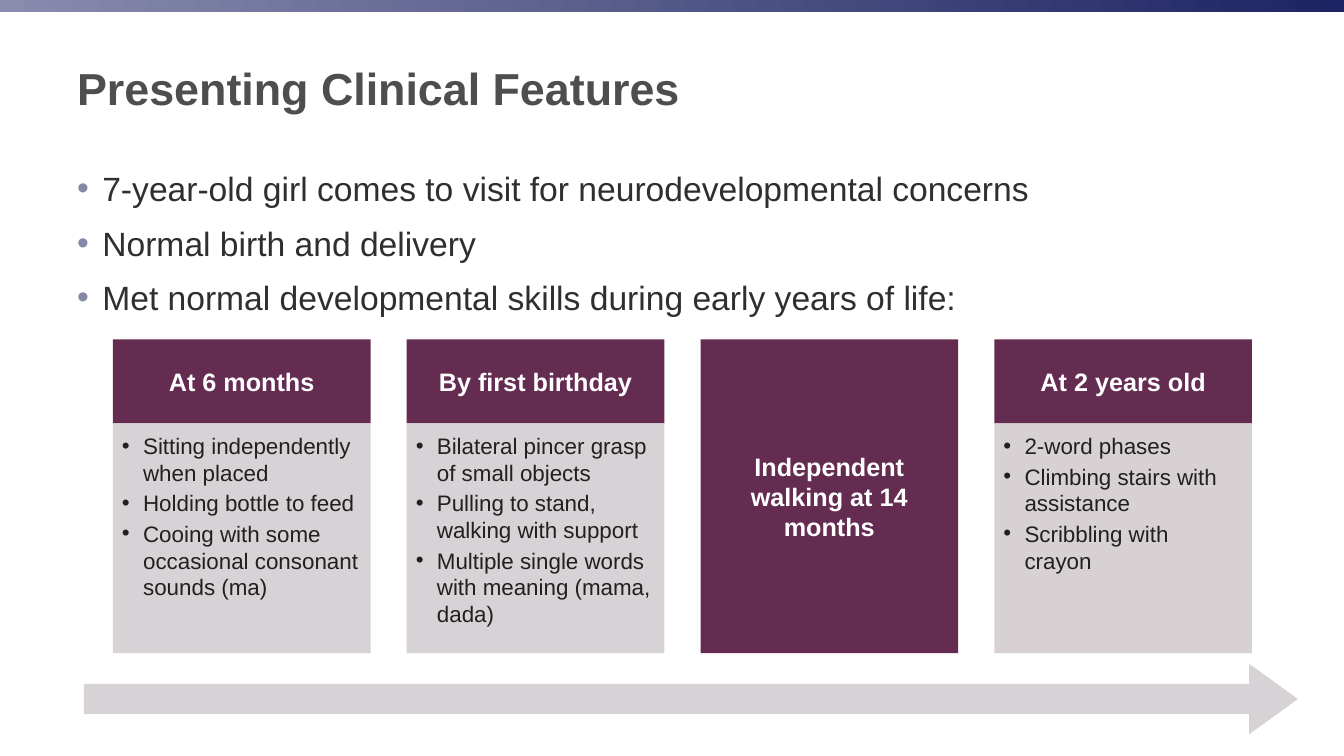
from dataclasses import dataclass
from typing import Optional

from lxml import etree
from pptx import Presentation, util as u
from pptx.dml.color import RGBColor
from pptx.enum import shapes, text
from pptx.oxml import ns


@dataclass(frozen=True)
class Theme:
    font: str = "Arial"
    bar_start: str = "898CAD"
    bar_end: str = "1C2463"
    title: str = "4D4E4D"
    body: str = "2F2F2F"
    bullet: str = "8589A7"
    plum: str = "642C50"
    mist: str = "D7D2D6"
    mist_sheer: str = "D3CDD0"
    detail: str = "202020"
    white: str = "FFFFFF"
    title_size: int = 32
    body_size: int = 24
    head_size: int = 18
    detail_size: int = 16


@dataclass(frozen=True)
class Box:
    """Percentages of the slide's width and height."""
    left: float
    top: float
    width: float
    height: float


@dataclass(frozen=True)
class Style:
    size: int
    color: str
    bold: bool = False
    align: text.PP_ALIGN = text.PP_ALIGN.LEFT
    anchor: text.MSO_ANCHOR = text.MSO_ANCHOR.TOP
    insets: tuple[float, float, float, float] = (0.1, 0.05, 0.1, 0.05)
    before: float = 0
    after: float = 0
    indent: float = 0
    bullet_color: Optional[str] = None


@dataclass(frozen=True)
class Card:
    heading: str
    details: tuple[str, ...] = ()
    fill: str = "D7D2D6"
    alpha: int = 100


T = Theme()
TITLE = Style(T.title_size, T.title, bold=True, anchor=text.MSO_ANCHOR.MIDDLE)
BODY = Style(T.body_size, T.body, before=10, indent=0.25, bullet_color=T.bullet)
HEAD = Style(T.head_size, T.white, bold=True, align=text.PP_ALIGN.CENTER,
             anchor=text.MSO_ANCHOR.MIDDLE, insets=(0.12, 0.07, 0.12, 0.07))
DETAIL = Style(T.detail_size, T.detail, insets=(0.09, 0.09, 0.12, 0.13),
               after=2.4, indent=0.21, bullet_color=T.detail)

FEATURES = (
    "7-year-old girl comes to visit for neurodevelopmental concerns",
    "Normal birth and delivery",
    "Met normal developmental skills during early years of life:",
)
CARDS = (
    Card("At 6 months", (
        "Sitting independently when placed",
        "Holding bottle to feed",
        "Cooing with some occasional consonant sounds (ma)")),
    Card("By first birthday", (
        "Bilateral pincer grasp of small objects",
        "Pulling to stand, walking with support",
        "Multiple single words with meaning (mama, dada)")),
    Card("Independent walking at 14 months"),
    Card("At 2 years old", (
        "2-word phases",
        "Climbing stairs with assistance",
        "Scribbling with crayon"), T.mist_sheer, 90),
)
CARD_LEFT, CARD_PITCH, CARD_WIDTH = 8.4, 21.86, 19.17
CARD_TOP, HEAD_HEIGHT, DETAIL_HEIGHT = 44.9, 11.1, 30.4

prs = Presentation()
prs.slide_width, prs.slide_height = u.Inches(13.33), u.Inches(7.5)
s = prs.slides.add_slide(prs.slide_layouts[6])


def place(box: Box) -> tuple[int, int, int, int]:
    w, h = prs.slide_width / 100, prs.slide_height / 100
    return (round(box.left * w), round(box.top * h),
            round(box.width * w), round(box.height * h))


def add_bullet(p, style: Style) -> None:
    pPr = p._p.get_or_add_pPr()
    pPr.set("marL", str(u.Inches(style.indent)))
    pPr.set("indent", str(-u.Inches(style.indent)))
    color = etree.SubElement(pPr, ns.qn("a:buClr"))
    etree.SubElement(color, ns.qn("a:srgbClr"), val=style.bullet_color)
    etree.SubElement(pPr, ns.qn("a:buFont"), typeface=T.font)
    etree.SubElement(pPr, ns.qn("a:buChar"), char="•")


def write(sp, lines: tuple[str, ...], style: Style) -> None:
    tf = sp.text_frame
    left, top, right, bottom = map(u.Inches, style.insets)
    frame = dict(word_wrap=True, vertical_anchor=style.anchor, margin_left=left,
                 margin_top=top, margin_right=right, margin_bottom=bottom)
    for name, value in frame.items():
        setattr(tf, name, value)
    for i, line in enumerate(lines):
        p = tf.add_paragraph() if i else tf.paragraphs[0]
        para = dict(alignment=style.align, space_before=u.Pt(style.before),
                    space_after=u.Pt(style.after))
        for name, value in para.items():
            setattr(p, name, value)
        if style.bullet_color:
            add_bullet(p, style)
        r = p.add_run()
        r.text = line
        for name, value in dict(name=T.font, size=u.Pt(style.size), bold=style.bold).items():
            setattr(r.font, name, value)
        r.font.color.rgb = RGBColor.from_string(style.color)


def add_text(box: Box, lines: tuple[str, ...], style: Style) -> None:
    write(s.shapes.add_textbox(*place(box)), lines, style)


def add_block(box: Box, fill: str, kind=shapes.MSO_SHAPE.RECTANGLE, alpha: int = 100):
    sp = s.shapes.add_shape(kind, *place(box))
    sp.shadow.inherit = False
    sp.line.fill.background()
    sp.fill.solid()
    sp.fill.fore_color.rgb = RGBColor.from_string(fill)
    if alpha < 100:
        color = sp._element.spPr.find(ns.qn("a:solidFill"))[0]
        etree.SubElement(color, ns.qn("a:alpha"), val=str(alpha * 1000))
    return sp


def add_card(column: int, card: Card) -> None:
    left = CARD_LEFT + column * CARD_PITCH
    height = HEAD_HEIGHT if card.details else HEAD_HEIGHT + DETAIL_HEIGHT
    head = add_block(Box(left, CARD_TOP, CARD_WIDTH, height), T.plum)
    write(head, (card.heading,), HEAD)
    if card.details:
        box = Box(left, CARD_TOP + HEAD_HEIGHT, CARD_WIDTH, DETAIL_HEIGHT)
        write(add_block(box, card.fill, alpha=card.alpha), card.details, DETAIL)


def add_top_bar() -> None:
    bar = add_block(Box(0, 0, 100, 1.6), T.bar_start)
    bar.fill.gradient()
    bar.fill.gradient_angle = 0
    for stop, position, color in zip(bar.fill.gradient_stops, (0, 1), (T.bar_start, T.bar_end)):
        stop.position = position
        stop.color.rgb = RGBColor.from_string(color)


def main() -> None:
    add_top_bar()
    add_text(Box(5, 2.93, 88.1, 17.33), ("Presenting Clinical Features",), TITLE)
    add_text(Box(5, 21.6, 88.1, 68.8), FEATURES, BODY)
    for column, card in enumerate(CARDS):
        add_card(column, card)
    arrow = add_block(Box(6.25, 87.8, 90.32, 9.33), T.mist, shapes.MSO_SHAPE.RIGHT_ARROW)
    arrow.adjustments[0], arrow.adjustments[1] = 0.43, 0.69
    prs.save("out.pptx")


if __name__ == "__main__":
    main()
